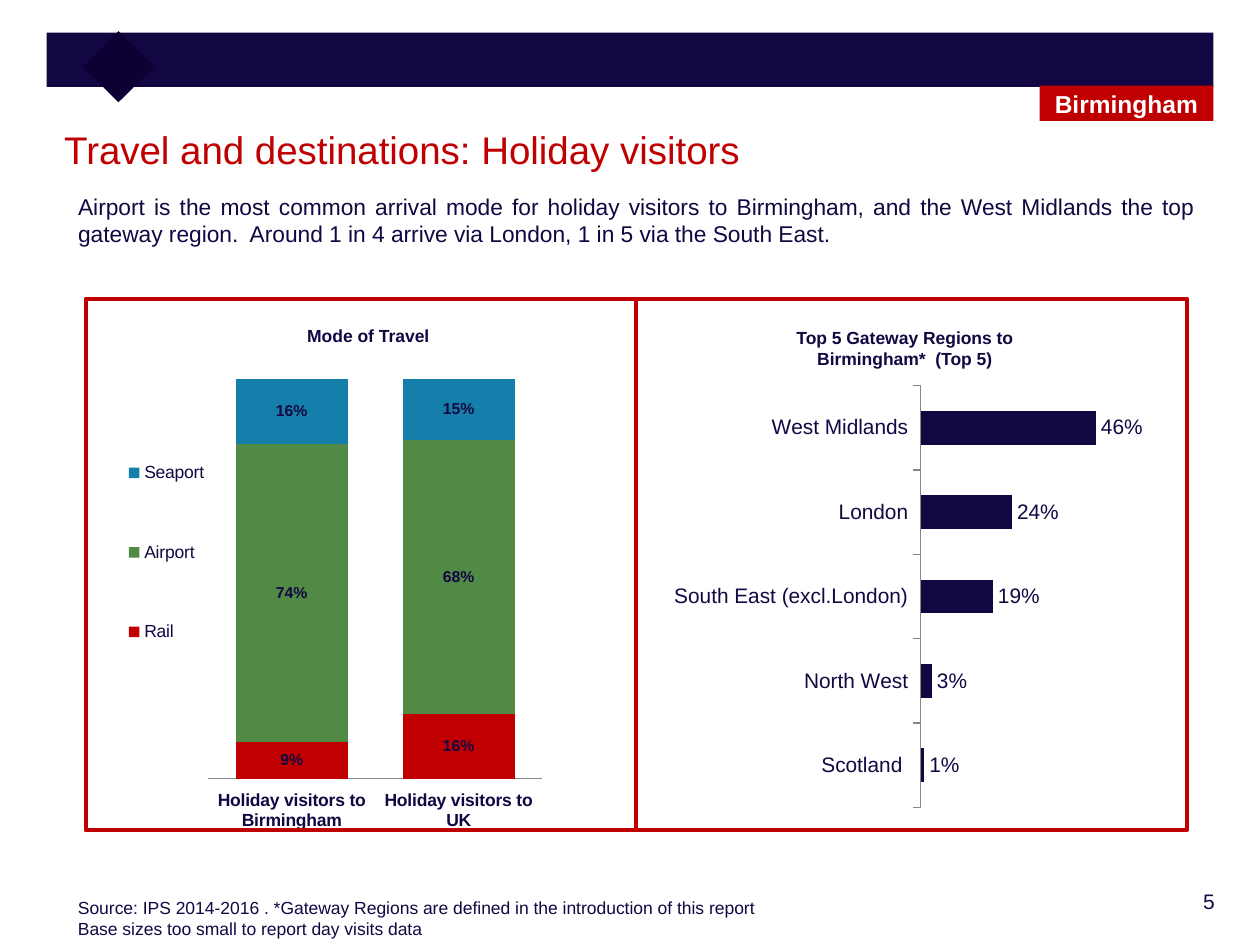
from dataclasses import dataclass

from lxml.etree import SubElement
from pptx import Presentation
from pptx.chart.data import CategoryChartData
from pptx.dml.color import RGBColor
from pptx.enum.chart import XL_CHART_TYPE, XL_LEGEND_POSITION, XL_TICK_LABEL_POSITION, XL_TICK_MARK
from pptx.enum.shapes import MSO_SHAPE
from pptx.enum.text import MSO_ANCHOR, MSO_AUTO_SIZE, PP_ALIGN
from pptx.oxml.ns import qn
from pptx.util import Emu, Pt

PX = 9144  # 100 px to the inch


@dataclass(frozen=True)
class Theme:
    font: str = "Arial"
    navy: str = "120742"
    diamond: str = "0E0033"
    red: str = "C00000"
    green: str = "518A45"
    blue: str = "157EAB"
    white: str = "FFFFFF"
    axis: str = "868686"
    title: int = 22
    tag: int = 14
    body: int = 13
    label: int = 12
    small: int = 10
    value: int = 9


def px(*lengths):
    return [Emu(length * PX) for length in lengths]


def place_inner(parent, index, fractions, inner=False):
    """Give a plot area or legend a fixed place, as fractions of its chart."""
    for old in parent.findall(qn("c:layout")):
        parent.remove(old)
    layout = SubElement(parent, qn("c:layout"))
    parent.insert(index, layout)
    manual = SubElement(layout, qn("c:manualLayout"))
    settings = [("layoutTarget", "inner")] if inner else []
    settings += [("xMode", "edge"), ("yMode", "edge")]
    settings += zip("xywh", fractions)
    for name, value in settings:
        SubElement(manual, qn(f"c:{name}")).set("val", str(value))


class SlideBuilder:
    def __init__(self, page, theme):
        self.page = page
        self.theme = theme

    def style_font(self, font, size, color=None, bold=False):
        font.name = self.theme.font
        font.size = Pt(size)
        font.bold = bold
        font.color.rgb = RGBColor.from_string(color or self.theme.navy)

    def fill_text(self, box, lines, size, color=None, bold=False,
                  align=PP_ALIGN.LEFT, anchor=MSO_ANCHOR.TOP):
        frame = box.text_frame
        frame.word_wrap = True
        frame.auto_size = MSO_AUTO_SIZE.NONE
        frame.vertical_anchor = anchor
        for number, line in enumerate(lines):
            para = frame.add_paragraph() if number else frame.paragraphs[0]
            para.alignment = align
            para.space_before = Pt(0)
            span = para.add_run()
            span.text = line
            self.style_font(span.font, size, color, bold)

    def text(self, place, lines, size, **style):
        self.fill_text(self.page.shapes.add_textbox(*px(*place)), lines, size, **style)

    def placeholder(self, index, place, line, size, **style):
        box = self.page.placeholders[index]
        box.left, box.top, box.width, box.height = px(*place)
        properties = box.text_frame.paragraphs[0]._p.get_or_add_pPr()
        properties.set("marL", "0")
        properties.set("indent", "0")
        SubElement(properties, qn("a:buNone"))
        self.fill_text(box, [line], size, **style)

    def rectangle(self, place, fill=None, line=None, rotation=0):
        box = self.page.shapes.add_shape(MSO_SHAPE.RECTANGLE, *px(*place))
        box.shadow.inherit = False
        box.rotation = rotation
        if fill:
            box.fill.solid()
            box.fill.fore_color.rgb = RGBColor.from_string(fill)
        else:
            box.fill.background()
        if line:
            box.line.color.rgb = RGBColor.from_string(line)
            box.line.width = Pt(2.25)
        else:
            box.line.fill.background()
        return box

    def bar_chart(self, kind, place, categories, series, gap, plot_place, top, tick,
                  axis_size, value_size, bold=False):
        """Add a bar chart; series holds (name, values, colour) rows."""
        data = CategoryChartData(number_format="0%")
        data.categories = categories
        for name, values, _ in series:
            data.add_series(name, values)
        chart = self.page.shapes.add_chart(kind, *px(*place), data).chart
        chart.has_title = False
        chart.has_legend = False
        self.style_font(chart.font, axis_size)
        plot = chart.plots[0]
        plot.gap_width = gap
        plot.vary_by_categories = False
        for bars, (_, _, color) in zip(plot.series, series):
            bars.format.fill.solid()
            bars.format.fill.fore_color.rgb = RGBColor.from_string(color)
            labels = bars.data_labels
            labels.show_value = True
            labels.number_format = "0%"
            labels.number_format_is_linked = False
            self.style_font(labels.font, value_size, bold=bold)
        scale = chart.value_axis
        scale.minimum_scale, scale.maximum_scale = 0, top
        scale.has_major_gridlines = False
        scale.visible = False
        axis = chart.category_axis
        axis.major_tick_mark = tick
        axis.minor_tick_mark = XL_TICK_MARK.NONE
        axis.tick_label_position = XL_TICK_LABEL_POSITION.LOW
        axis.format.line.color.rgb = RGBColor.from_string(self.theme.axis)
        axis.format.line.width = Pt(0.75)
        self.style_font(axis.tick_labels.font, axis_size, bold=bold)
        place_inner(chart._chartSpace.chart.plotArea, 0, plot_place, inner=True)
        return chart

    def legend(self, chart, fractions):
        chart.has_legend = True
        chart.legend.position = XL_LEGEND_POSITION.LEFT
        chart.legend.include_in_layout = False
        self.style_font(chart.legend.font, self.theme.small)
        place_inner(chart.legend._element, 1, fractions)


def main():
    theme = Theme()
    deck = Presentation()
    deck.slide_width, deck.slide_height = px(1000, 750)
    slide = SlideBuilder(deck.slides.add_slide(deck.slide_layouts[1]), theme)

    slide.rectangle((37, 26, 926, 43), fill=theme.navy)
    slide.rectangle((74, 33, 40, 40), fill=theme.diamond, rotation=45)
    tag = slide.rectangle((825, 68, 138, 28), fill=theme.red)
    slide.fill_text(tag, ["Birmingham"], theme.tag, color=theme.white, bold=True,
                    align=PP_ALIGN.CENTER, anchor=MSO_ANCHOR.MIDDLE)

    slide.placeholder(0, (41, 95, 921, 61), "Travel and destinations: Holiday visitors",
                      theme.title, color=theme.red)
    slide.placeholder(1, (52, 148, 905, 74),
                      "Airport is the most common arrival mode for holiday visitors to Birmingham, "
                      "and the West Midlands the top gateway region.  Around 1 in 4 arrive via "
                      "London, 1 in 5 via the South East.",
                      theme.body, align=PP_ALIGN.JUSTIFY)

    slide.text((234, 253, 147, 31), ["Mode of Travel"], theme.small, bold=True)
    travel = slide.bar_chart(
        XL_CHART_TYPE.COLUMN_STACKED_100, (77, 278, 368, 382),
        ["Holiday visitors to Birmingham", "Holiday visitors to UK"],
        [("Rail", (0.09, 0.16), theme.red),
         ("Airport", (0.74, 0.68), theme.green),
         ("Seaport", (0.16, 0.15), theme.blue)],
        gap=49, plot_place=(0.24, 0.06, 0.72, 0.83), top=1, tick=XL_TICK_MARK.NONE,
        axis_size=theme.small, value_size=theme.value, bold=True)
    travel.plots[0].overlap = 100
    slide.legend(travel, (0.06, 0.11, 0.18, 0.62))

    slide.text((612, 255, 212, 46), ["Top 5 Gateway Regions to Birmingham*  (Top 5)"],
               theme.small, bold=True, align=PP_ALIGN.CENTER)
    gateways = slide.bar_chart(
        XL_CHART_TYPE.BAR_CLUSTERED, (535, 299, 372, 349),
        ["West Midlands", "London", "South East (excl.London)", "North West", "Scotland "],
        [("Series 1", (0.46, 0.24, 0.19, 0.03, 0.01), theme.navy)],
        gap=150, plot_place=(0.53, 0.02, 0.41, 0.96), top=0.5, tick=XL_TICK_MARK.OUTSIDE,
        axis_size=theme.label, value_size=theme.label)
    gateways.category_axis.reverse_order = True

    panel_width = 437
    for column in range(2):
        slide.rectangle((68 + column * panel_width, 237, panel_width, 422), line=theme.red)

    slide.text((52, 707, 908, 61),
               ["Source: IPS 2014-2016 . *Gateway Regions are defined in the introduction "
                "of this report",
                "Base sizes too small to report day visits data"], theme.small)
    slide.text((853, 700, 121, 36), ["5"], theme.label, align=PP_ALIGN.RIGHT)

    deck.save("out.pptx")


if __name__ == "__main__":
    main()
